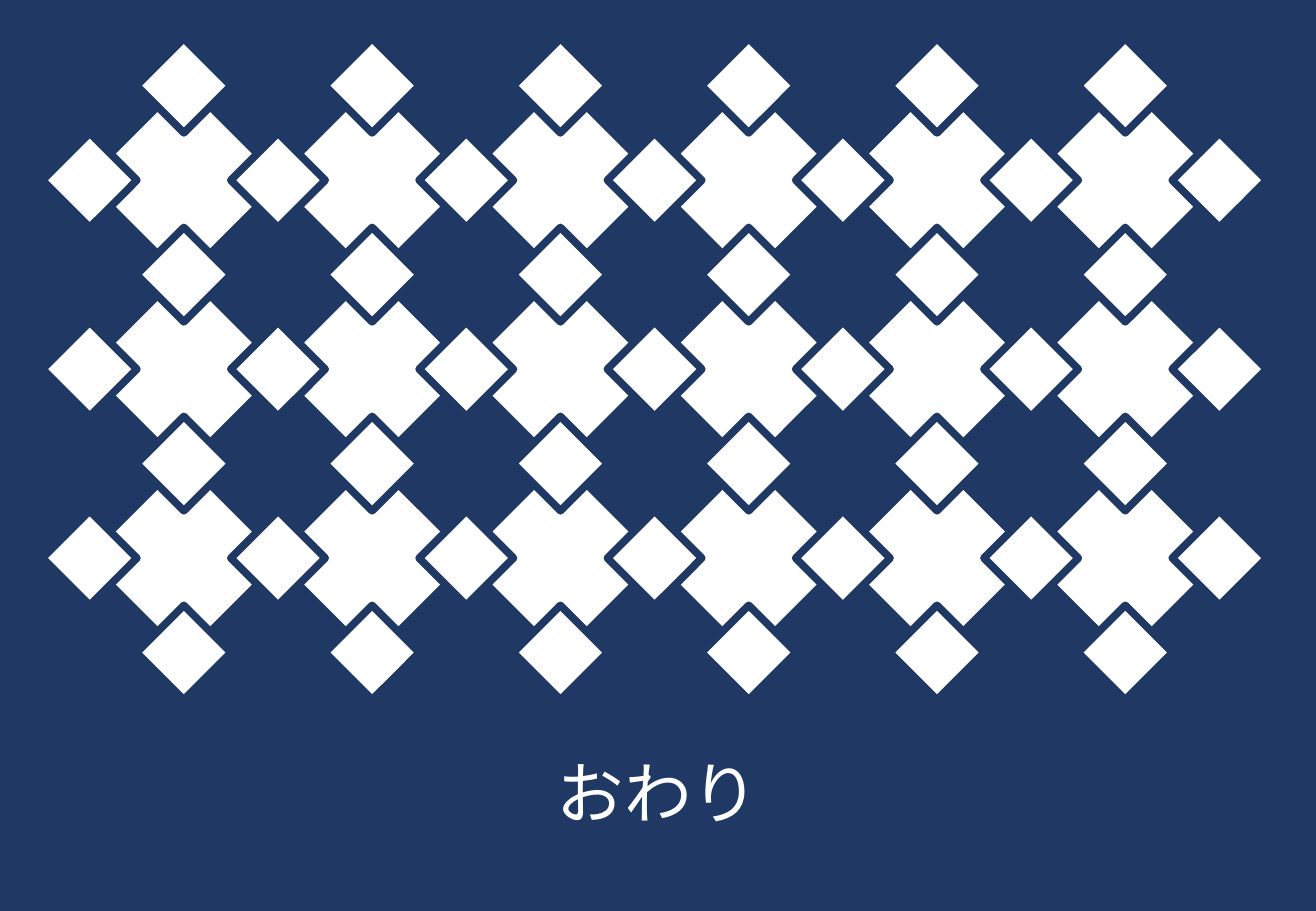
import dataclasses
import itertools

import pptx
import pptx.dml.color
import pptx.enum.shapes
import pptx.enum.text
import pptx.util

Pt = pptx.util.Pt


@dataclasses.dataclass(frozen=True)
class Theme:
    """Colours, font and sizes of the closing slide."""
    navy: str = "203864"
    white: str = "FFFFFF"
    font: str = "Calibri"
    closing_size: float = 40
    outline: float = 4.5


THEME = Theme()


def rgb(colour):
    """Turn a hex string into a colour."""
    return pptx.dml.color.RGBColor.from_string(colour)


def add_rectangle(shapes, left, top, width, height, fill, outline=None, rotation=0):
    """Add a flat rectangle, outlined only when a colour is given."""
    shape = shapes.add_shape(pptx.enum.shapes.MSO_SHAPE.RECTANGLE,
                             Pt(left), Pt(top), Pt(width), Pt(height))
    shape.shadow.inherit = False
    shape.rotation = rotation
    shape.fill.solid()
    shape.fill.fore_color.rgb = rgb(fill)
    if outline:
        shape.line.color.rgb = rgb(outline)
        shape.line.width = Pt(THEME.outline)
    else:
        shape.line.fill.background()


def add_diamond(shapes, centre_x, centre_y, side, outline=None):
    """Add a white square standing on its corner around a centre."""
    add_rectangle(shapes, centre_x - side / 2, centre_y - side / 2, side, side,
                  THEME.white, outline, rotation=315)


def add_text(slide, text, left, top, width, height, *, size, colour, alignment):
    """Add a wrapping text box with one formatted paragraph."""
    frame = slide.shapes.add_textbox(Pt(left), Pt(top), Pt(width), Pt(height)).text_frame
    frame.word_wrap = True
    frame.auto_size = pptx.enum.text.MSO_AUTO_SIZE.SHAPE_TO_FIT_TEXT
    paragraph = frame.paragraphs[0]
    paragraph.alignment = alignment
    run = paragraph.add_run()
    run.text = text
    run.font.name = THEME.font
    run.font.size = Pt(size)
    run.font.color.rgb = rgb(colour)


def add_lattice(slide, left, top, width, height, columns=6, rows=3):
    """Put a large diamond in each cell and a small one on each cell side."""
    cell_width, cell_height = width / columns, height / rows
    large_side = 79.2
    small_side = large_side / 2
    column_centres = [left + (column + 0.5) * cell_width for column in range(columns)]
    row_centres = [top + (row + 0.5) * cell_height for row in range(rows)]
    column_edges = [left + column * cell_width for column in range(columns + 1)]
    row_edges = [top + row * cell_height for row in range(rows + 1)]
    for centre_x, centre_y in itertools.product(column_centres, row_centres):
        add_diamond(slide.shapes, centre_x, centre_y, large_side)
    joints = slide.shapes.add_group_shape()
    for centre_x, centre_y in itertools.chain(
            itertools.product(column_edges, row_centres),
            itertools.product(column_centres, row_edges)):
        add_diamond(joints.shapes, centre_x, centre_y, small_side, outline=THEME.navy)


def build_closing_slide(presentation, left, top, width, height):
    """Build the closing slide within the given box."""
    slide = presentation.slides.add_slide(presentation.slide_layouts[6])
    add_rectangle(slide.shapes, left, top, width, height, THEME.navy)
    add_lattice(slide, left + 53.2, top + 50.8, 669.6, 336)
    add_text(slide, "おわり", left + 36, top + 441.4, width - 72, 55.4,
             size=THEME.closing_size, colour=THEME.white,
             alignment=pptx.enum.text.PP_ALIGN.CENTER)


def main():
    """Create and save the presentation."""
    width, height = 780, 540
    presentation = pptx.Presentation()
    presentation.slide_width = Pt(width)
    presentation.slide_height = Pt(height)
    build_closing_slide(presentation, 0, 0, width, height)
    presentation.save("out.pptx")


if __name__ == "__main__":
    main()
